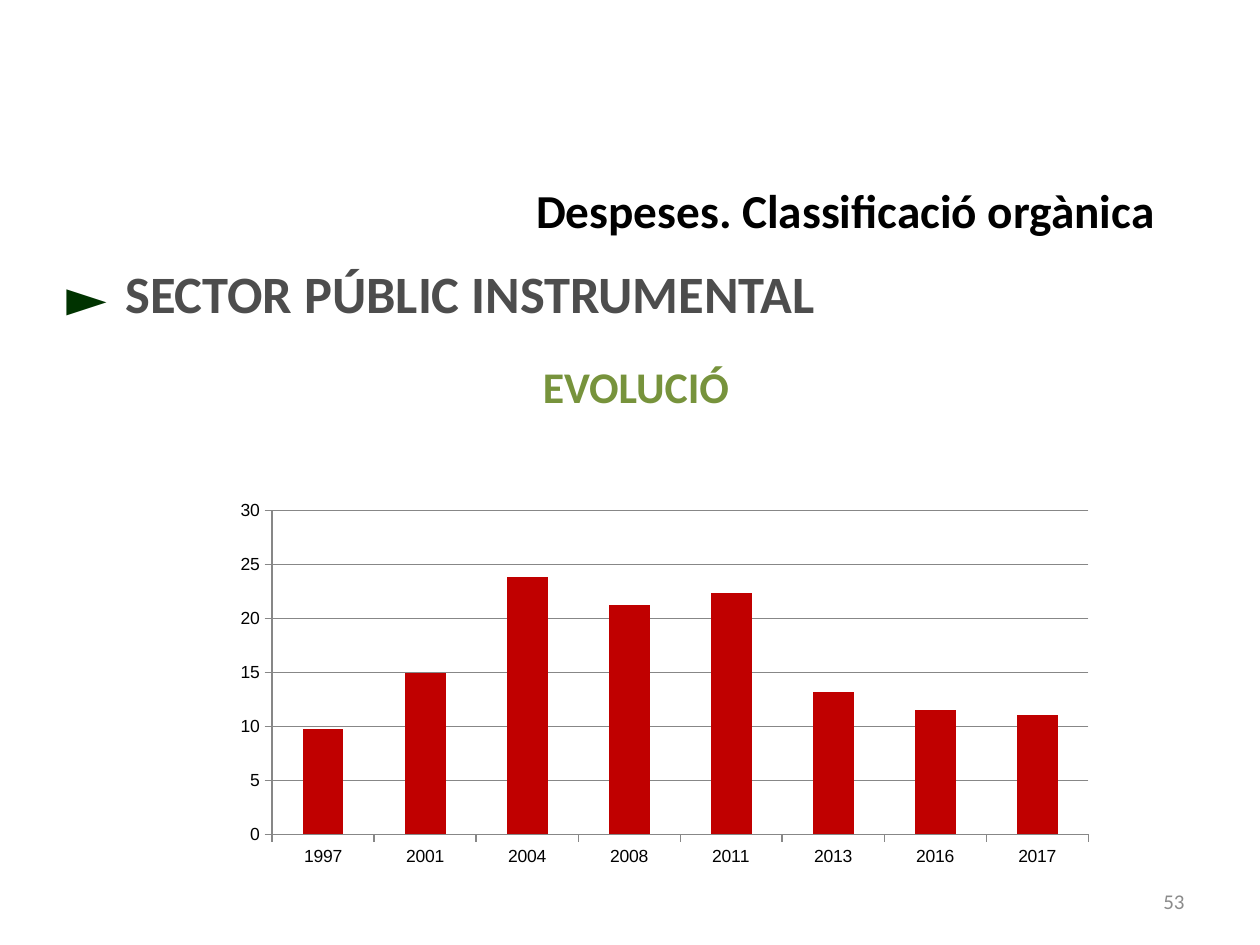
import pptx
import pptx.chart.data
import pptx.dml.color
import pptx.enum.chart
import pptx.enum.text
import pptx.util

RGBColor = pptx.dml.color.RGBColor
BLACK = RGBColor(0x00, 0x00, 0x00)
DARK_GRAY = RGBColor(0x4D, 0x4D, 0x4D)
PAGE_GRAY = RGBColor(0x8B, 0x8B, 0x8B)
AXIS_GRAY = RGBColor(0x87, 0x87, 0x87)
DARK_GREEN = RGBColor(0x00, 0x33, 0x00)
OLIVE = RGBColor(0x77, 0x93, 0x3C)
RED = RGBColor(0xC0, 0x00, 0x00)

ALIGN = pptx.enum.text.PP_ALIGN
ANCHOR = pptx.enum.text.MSO_ANCHOR
EMU_PER_PX = 914400 // 126

TEXTS = [
    ("Despeses. Classificació orgànica", (432, 175, 735, 69), 27, BLACK, True, ALIGN.RIGHT, ANCHOR.TOP),
    ("SECTOR PÚBLIC INSTRUMENTAL", (113, 255, 963, 155), 30, DARK_GRAY, True, ALIGN.LEFT, ANCHOR.TOP),
    ("►", (54, 258, 69, 76), 30, DARK_GREEN, True, ALIGN.LEFT, ANCHOR.TOP),
    ("53", (903, 876, 294, 50), 12, PAGE_GRAY, False, ALIGN.RIGHT, ANCHOR.MIDDLE),
    ("EVOLUCIÓ", (105, 354, 1062, 66), 25, OLIVE, True, ALIGN.CENTER, ANCHOR.TOP),
]
CHART_BOX = (223, 493, 883, 381)
SPENDING = {
    "1997": 9.7, "2001": 14.9, "2004": 23.8, "2008": 21.2,
    "2011": 22.3, "2013": 13.2, "2016": 11.5, "2017": 11,
}


def emu(box):
    return [length * EMU_PER_PX for length in box]


def add_text(slide, text, box, size, color, bold, alignment, anchor):
    text_frame = slide.shapes.add_textbox(*emu(box)).text_frame
    text_frame.word_wrap = True
    text_frame.vertical_anchor = anchor
    text_frame.text = text
    paragraph = text_frame.paragraphs[0]
    paragraph.alignment = alignment
    font = paragraph.runs[0].font
    font.name = "Calibri"
    font.size = pptx.util.Pt(size)
    font.bold = bold
    font.color.rgb = color


def style_line(line):
    line.color.rgb = AXIS_GRAY
    line.width = pptx.util.Pt(0.75)


def add_spending_chart(slide):
    data = pptx.chart.data.CategoryChartData()
    data.categories = list(SPENDING)
    data.add_series("Series 1", list(SPENDING.values()))
    chart = slide.shapes.add_chart(
        pptx.enum.chart.XL_CHART_TYPE.COLUMN_CLUSTERED, *emu(CHART_BOX), data
    ).chart
    chart.has_legend = False
    chart.has_title = False
    chart.font.name = "Arial"
    chart.font.size = pptx.util.Pt(10)
    chart.font.color.rgb = BLACK
    for axis in (chart.category_axis, chart.value_axis):
        axis.major_tick_mark = pptx.enum.chart.XL_TICK_MARK.OUTSIDE
        axis.minor_tick_mark = pptx.enum.chart.XL_TICK_MARK.NONE
        style_line(axis.format.line)
    value_axis = chart.value_axis
    value_axis.minimum_scale = 0
    value_axis.maximum_scale = 30
    value_axis.major_unit = 5
    value_axis.has_major_gridlines = True
    style_line(value_axis.major_gridlines.format.line)
    plot = chart.plots[0]
    plot.gap_width = 150
    plot.vary_by_categories = False
    fill = plot.series[0].format.fill
    fill.solid()
    fill.fore_color.rgb = RED


def main():
    presentation = pptx.Presentation()
    presentation.slide_width = pptx.util.Inches(10)
    presentation.slide_height = pptx.util.Inches(7.5)
    slide = presentation.slides.add_slide(presentation.slide_layouts[6])
    for entry in TEXTS:
        add_text(slide, *entry)
    add_spending_chart(slide)
    presentation.save("out.pptx")


if __name__ == "__main__":
    main()
